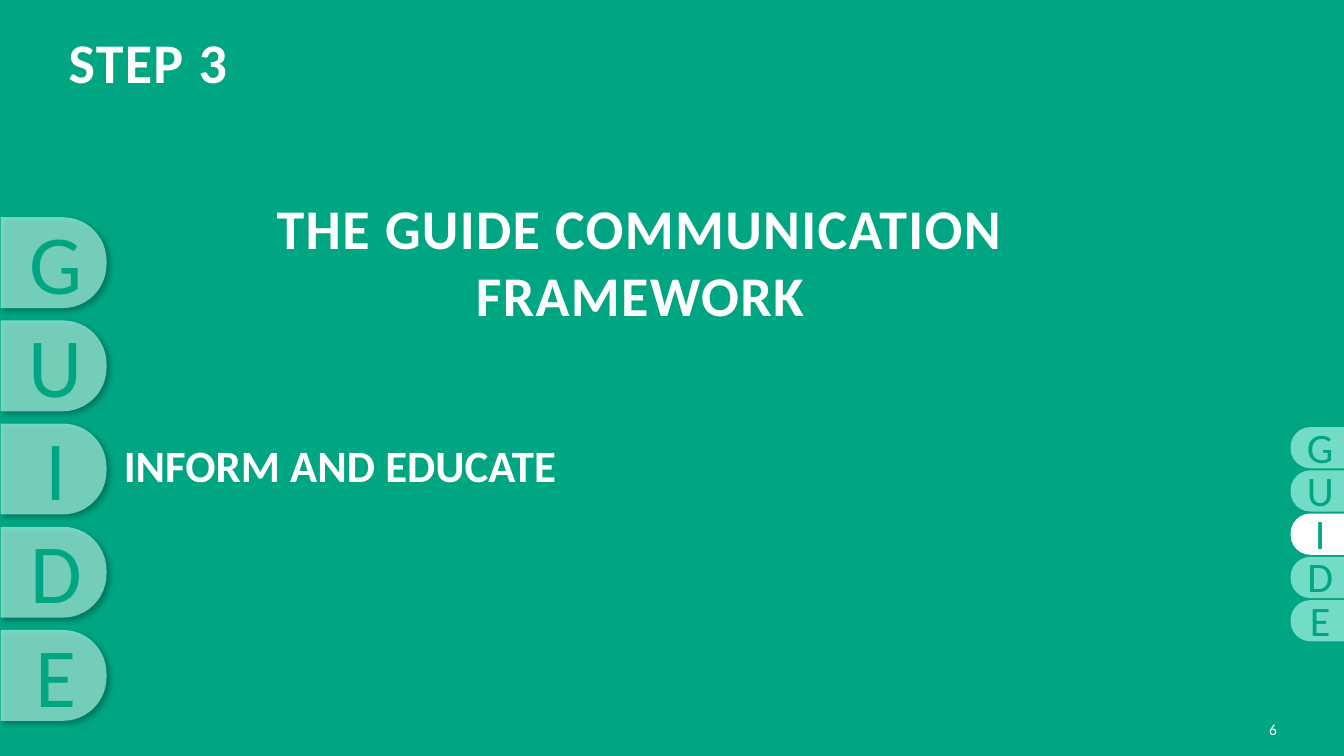
from copy import deepcopy
from dataclasses import dataclass

from lxml import etree
from pptx import Presentation
from pptx.dml.color import RGBColor
from pptx.enum.shapes import MSO_SHAPE
from pptx.enum.text import MSO_ANCHOR, PP_ALIGN
from pptx.oxml import parse_xml
from pptx.oxml.ns import nsdecls, qn
from pptx.util import Cm, Pt

TAB_SHAPE = MSO_SHAPE.ROUND_2_SAME_RECTANGLE
TOP, MIDDLE = MSO_ANCHOR.TOP, MSO_ANCHOR.MIDDLE
LEFT, CENTER, RIGHT = PP_ALIGN.LEFT, PP_ALIGN.CENTER, PP_ALIGN.RIGHT


@dataclass(frozen=True)
class Theme:
    font: str = "Calibri"
    green: RGBColor = RGBColor(0x00, 0xA5, 0x82)
    mint: RGBColor = RGBColor(0xBA, 0xFF, 0xF0)
    white: RGBColor = RGBColor(0xFF, 0xFF, 0xFF)
    mint_alpha: int = 62000
    heading: int = 40
    subheading: int = 32
    number: int = 11
    big_letter: int = 60
    small_letter: int = 30


THEME = Theme()


def write(sp, text, size, color=THEME.white, align=LEFT, anchor=MIDDLE,
          bold=False, spacing=0, wrap=True):
    """Fill a shape with one formatted paragraph; spacing is in 1/100 pt."""
    tf = sp.text_frame
    frame = dict(word_wrap=wrap, vertical_anchor=anchor, margin_left=0,
                 margin_right=0, margin_top=0, margin_bottom=0)
    for name, value in frame.items():
        setattr(tf, name, value)
    p = tf.paragraphs[0]
    p.text = text
    p.alignment = align
    for r in p.runs:
        for name, value in dict(name=THEME.font, size=Pt(size), bold=bold).items():
            setattr(r.font, name, value)
        r.font.color.rgb = color
        if spacing:
            r.font._element.set("spc", str(spacing))
    for br in p._p.findall(qn("a:br")):
        br.append(deepcopy(p.runs[0].font._element))
    return p


prs = Presentation()
prs.slide_width, prs.slide_height = Cm(33.87), Cm(19.05)
s = prs.slides.add_slide(prs.slide_layouts[5])
s.background.fill.solid()
s.background.fill.fore_color.rgb = THEME.green

title = s.shapes.title
title.left, title.top, title.width, title.height = Cm(0.89), Cm(3.3), Cm(30.48), Cm(6.53)
write(title, "THE GUIDE COMMUNICATION\vFRAMEWORK", THEME.heading,
      align=CENTER, bold=True, spacing=100)

step = s.shapes.add_textbox(Cm(1.73), Cm(0.69), Cm(24.28), Cm(2.24))
write(step, "STEP 3", THEME.heading, anchor=TOP, bold=True, spacing=100)

topic = s.shapes.add_textbox(Cm(3.12), Cm(11.05), Cm(25.15), Cm(1.5))
p = write(topic, "INFORM AND EDUCATE", THEME.subheading, bold=True)
p.line_spacing = 0.9

number = s.shapes.add_textbox(Cm(30), Cm(17.86), Cm(2.18), Cm(1.02))
write(number, "6", THEME.number, align=RIGHT)

# Letter tabs: centres, pitch and sizes in cm; width and height before rotation
TAB_SETS = [
    dict(x=1.35, y=6.62, pitch=2.6, w=2.29, h=2.67, turn=90, letter_x=1.41,
         letter_y=6.57, letter_w=1.86, letter_h=2.82, size=THEME.big_letter,
         shadow=True, active=None),
    dict(x=33.21, y=11.28, pitch=1.09, w=1.04, h=1.37, turn=270, letter_x=33.27,
         letter_y=11.25, letter_w=0.67, letter_h=1.27, size=THEME.small_letter,
         shadow=False, active="I"),
]
SHADOW = (f'<a:effectLst {nsdecls("a")}>'
          '<a:outerShdw blurRad="50800" dist="38100" dir="2700000" algn="tl" rotWithShape="0">'
          '<a:srgbClr val="000000"><a:alpha val="40000"/></a:srgbClr>'
          '</a:outerShdw></a:effectLst>')

for tabs in TAB_SETS:
    w, h = tabs["w"], tabs["h"]
    letter_w, letter_h = tabs["letter_w"], tabs["letter_h"]
    for i, letter in enumerate("GUIDE"):
        drop = i * tabs["pitch"]
        tab = s.shapes.add_shape(TAB_SHAPE, Cm(tabs["x"] - w / 2),
                                 Cm(tabs["y"] + drop - h / 2), Cm(w), Cm(h))
        tab.rotation = tabs["turn"]
        tab.adjustments[0], tab.adjustments[1] = 0.48, 0
        tab.line.fill.background()
        tab.fill.solid()
        if letter == tabs["active"]:
            tab.fill.fore_color.rgb = THEME.white
        else:
            tab.fill.fore_color.rgb = THEME.mint
            color = tab._element.spPr.find(f'{qn("a:solidFill")}/{qn("a:srgbClr")}')
            etree.SubElement(color, qn("a:alpha")).set("val", str(THEME.mint_alpha))
        if tabs["shadow"]:
            tab._element.spPr.append(parse_xml(SHADOW))
        else:
            tab.shadow.inherit = False

        box = s.shapes.add_textbox(Cm(tabs["letter_x"] - letter_w / 2),
                                   Cm(tabs["letter_y"] + drop - letter_h / 2),
                                   Cm(letter_w), Cm(letter_h))
        write(box, letter, tabs["size"], THEME.green, CENTER, wrap=False)

prs.save("out.pptx")
